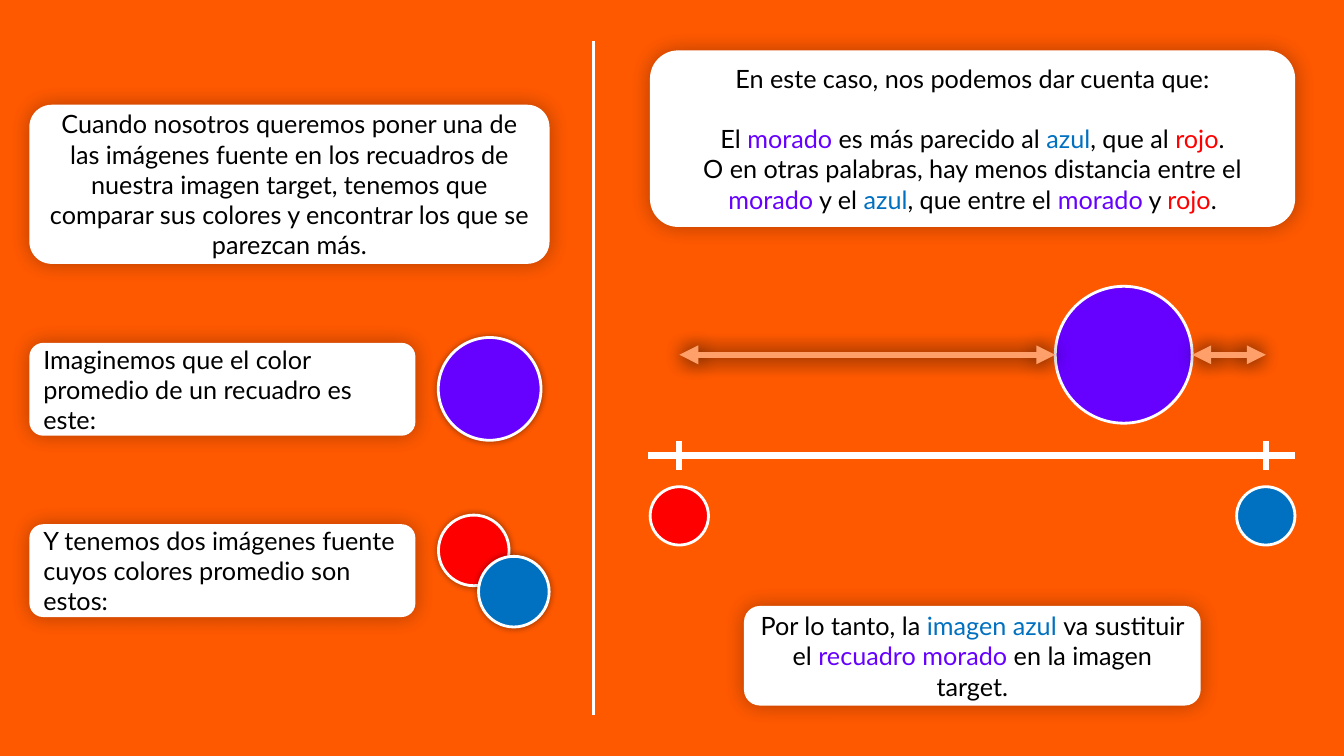
from dataclasses import dataclass

from lxml import etree
from pptx import Presentation
from pptx.dml.color import RGBColor
from pptx.enum import shapes, text
from pptx.oxml import ns
from pptx.util import Cm, Pt


@dataclass(frozen=True)
class Theme:
    background: str = "FF5900"
    white: str = "FFFFFF"
    ink: str = "000000"
    purple: str = "6600FF"
    blue: str = "0070C0"
    red: str = "FF0000"
    arrow: str = "FF9F69"
    font: str = "Lato"
    size: float = 18
    line_height: float = 21.6


THEME = Theme()
CENTER, LEFT = text.PP_ALIGN.CENTER, text.PP_ALIGN.LEFT

# Shadows: opacity in percent, blur in points
CARD_SHADOW, CIRCLE_SHADOW, ARROW_SHADOW = (30, 15), (40, 5), (100, 15)

# Cards: left, top, width, height in cm, corner, alignment, paragraphs.
# A paragraph lists its runs as (words, theme colour).
CARDS = [
    (0.74, 2.64, 13.11, 4.01, 0.14, CENTER, [
        [("Cuando nosotros queremos poner una de las imágenes fuente en los "
          "recuadros de nuestra imagen target, tenemos que comparar sus colores "
          "y encontrar los que se parezcan más.", "ink")]]),
    (0.74, 8.64, 9.73, 2.34, 0.15, LEFT, [
        [("Imaginemos que el color promedio de un recuadro es este:", "ink")]]),
    (0.74, 13.21, 9.73, 2.34, 0.15, LEFT, [
        [("Y tenemos dos imágenes fuente cuyos colores promedio son estos:", "ink")]]),
    (16.38, 1.27, 16.26, 4.45, 0.16, CENTER, [
        [("En este caso, nos podemos dar cuenta que:", "ink")],
        [("El ", "ink"), ("morado", "purple"), (" es más parecido al ", "ink"),
         ("azul", "blue"), (", que al ", "ink"), ("rojo", "red"), (".", "ink")],
        [("O en otras palabras, hay menos distancia entre el ", "ink"),
         ("morado", "purple"), (" y el ", "ink"), ("azul", "blue"),
         (", que entre el ", "ink"), ("morado", "purple"), (" y ", "ink"),
         ("rojo", "red"), (".", "ink")]]),
    (18.75, 15.27, 11.51, 2.51, 0.16, CENTER, [
        [("Por lo tanto, la ", "ink"), ("imagen azul ", "blue"),
         ("va sustituir el ", "ink"), ("recuadro morado", "purple"),
         (" en la imagen target.", "ink")]]),
]
# Card and paragraph index that opens after one empty line
GAP_BEFORE = (3, 1)

# Circles: centre x, centre y, diameter in cm, colour
SAMPLES = [
    (12.34, 9.8, 2.59, "purple"),
    (11.94, 13.87, 1.78, "red"),
    (12.95, 14.91, 1.78, "blue"),
]
DIVIDER = (14.96, 1.04, 14.96, 18.01)
AXIS_LEFT, AXIS_RIGHT, AXIS_Y = 16.33, 32.64, 11.48
RED_X, BLUE_X, PURPLE_X = 17.12, 31.9, 28.32
PURPLE_Y, PURPLE_SIZE = 8.94, 3.45
SWATCH_Y, SWATCH_SIZE = 13.0, 1.47
TICK_HALF = 0.36


def theme_color(name):
    return RGBColor.from_string(getattr(THEME, name))


def set_shadow(item, shadow):
    """Replace the inherited shadow by a glow-like one, or by none."""
    properties = item.element.spPr
    for old in properties.findall(ns.qn("a:effectLst")):
        properties.remove(old)
    effects = etree.SubElement(properties, ns.qn("a:effectLst"))
    if shadow:
        opacity, blur = shadow
        outer = etree.SubElement(effects, ns.qn("a:outerShdw"),
                                 blurRad=str(Pt(blur)), dist="0", dir="0",
                                 algn="ctr", rotWithShape="0")
        color = etree.SubElement(outer, ns.qn("a:srgbClr"), val=THEME.ink)
        etree.SubElement(color, ns.qn("a:alpha"), val=str(opacity * 1000))


def add_card(page, left, top, width, height, corner, align, paragraphs):
    card = page.shapes.add_shape(shapes.MSO_SHAPE.ROUNDED_RECTANGLE,
                                 Cm(left), Cm(top), Cm(width), Cm(height))
    card.adjustments[0] = corner
    card.fill.solid()
    card.fill.fore_color.rgb = theme_color("white")
    card.line.fill.background()
    set_shadow(card, CARD_SHADOW)
    frame = card.text_frame
    frame.word_wrap = True
    frame.vertical_anchor = text.MSO_ANCHOR.MIDDLE
    for index, runs in enumerate(paragraphs):
        para = frame.add_paragraph() if index else frame.paragraphs[0]
        para.alignment = align
        for words, color in runs:
            span = para.add_run()
            span.text = words
            span.font.name = THEME.font
            span.font.size = Pt(THEME.size)
            span.font.color.rgb = theme_color(color)
    return card


def add_circle(page, x, y, diameter, color, shadow=None):
    circle = page.shapes.add_shape(shapes.MSO_SHAPE.OVAL,
                                   Cm(x - diameter / 2), Cm(y - diameter / 2),
                                   Cm(diameter), Cm(diameter))
    circle.fill.solid()
    circle.fill.fore_color.rgb = theme_color(color)
    circle.line.color.rgb = theme_color("white")
    circle.line.width = Pt(2)
    set_shadow(circle, shadow)


def add_line(page, x1, y1, x2, y2, width=4.5, color="white", shadow=None):
    line = page.shapes.add_connector(shapes.MSO_CONNECTOR.STRAIGHT,
                                     Cm(x1), Cm(y1), Cm(x2), Cm(y2))
    line.line.color.rgb = theme_color(color)
    line.line.width = Pt(width)
    set_shadow(line, shadow)
    return line


def add_distance(page, start, end):
    """Draw a double-headed arrow at the height of the purple circle."""
    arrow = add_line(page, start, PURPLE_Y, end, PURPLE_Y,
                     color="arrow", shadow=ARROW_SHADOW)
    outline = arrow.line._get_or_add_ln()
    for tip in ("a:headEnd", "a:tailEnd"):
        etree.SubElement(outline, ns.qn(tip), type="triangle")


def add_scale(page):
    add_line(page, AXIS_LEFT, AXIS_Y, AXIS_RIGHT, AXIS_Y)
    for x, color in ((RED_X, "red"), (BLUE_X, "blue")):
        add_circle(page, x, SWATCH_Y, SWATCH_SIZE, color)
        add_line(page, x, AXIS_Y - TICK_HALF, x, AXIS_Y + TICK_HALF)
    add_circle(page, PURPLE_X, PURPLE_Y, PURPLE_SIZE, "purple")
    add_distance(page, RED_X, PURPLE_X - PURPLE_SIZE / 2)
    add_distance(page, PURPLE_X + PURPLE_SIZE / 2, BLUE_X)


def main():
    deck = Presentation()
    deck.slide_width, deck.slide_height = Cm(33.87), Cm(19.05)
    page = deck.slides.add_slide(deck.slide_layouts[6])
    page.background.fill.solid()
    page.background.fill.fore_color.rgb = theme_color("background")

    cards = [add_card(page, *card) for card in CARDS]
    card_index, para_index = GAP_BEFORE
    para = cards[card_index].text_frame.paragraphs[para_index]
    para.space_before = Pt(THEME.line_height)
    add_line(page, *DIVIDER, width=2.25)
    for sample in SAMPLES:
        add_circle(page, *sample, shadow=CIRCLE_SHADOW)
    add_scale(page)
    deck.save("out.pptx")


if __name__ == "__main__":
    main()
